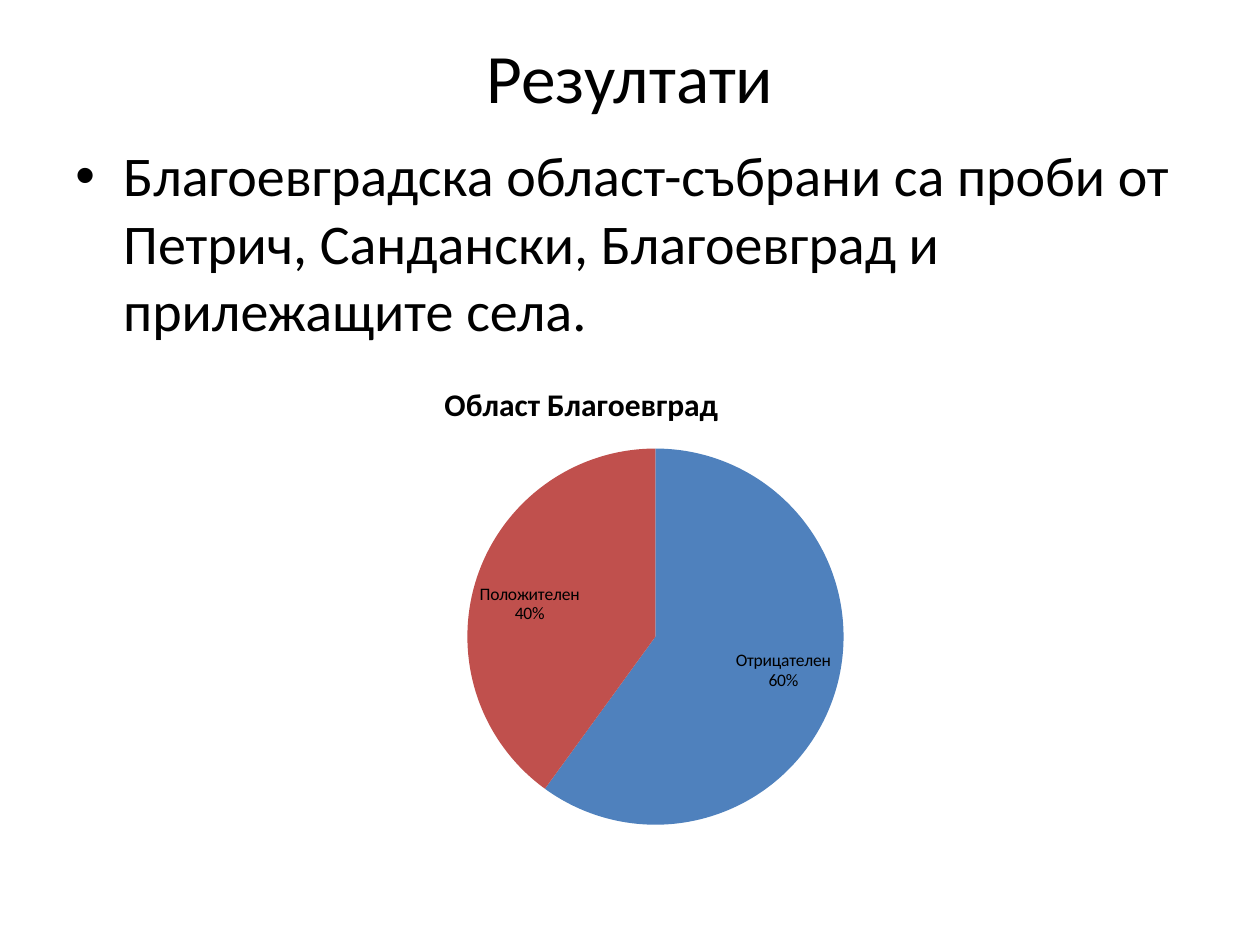
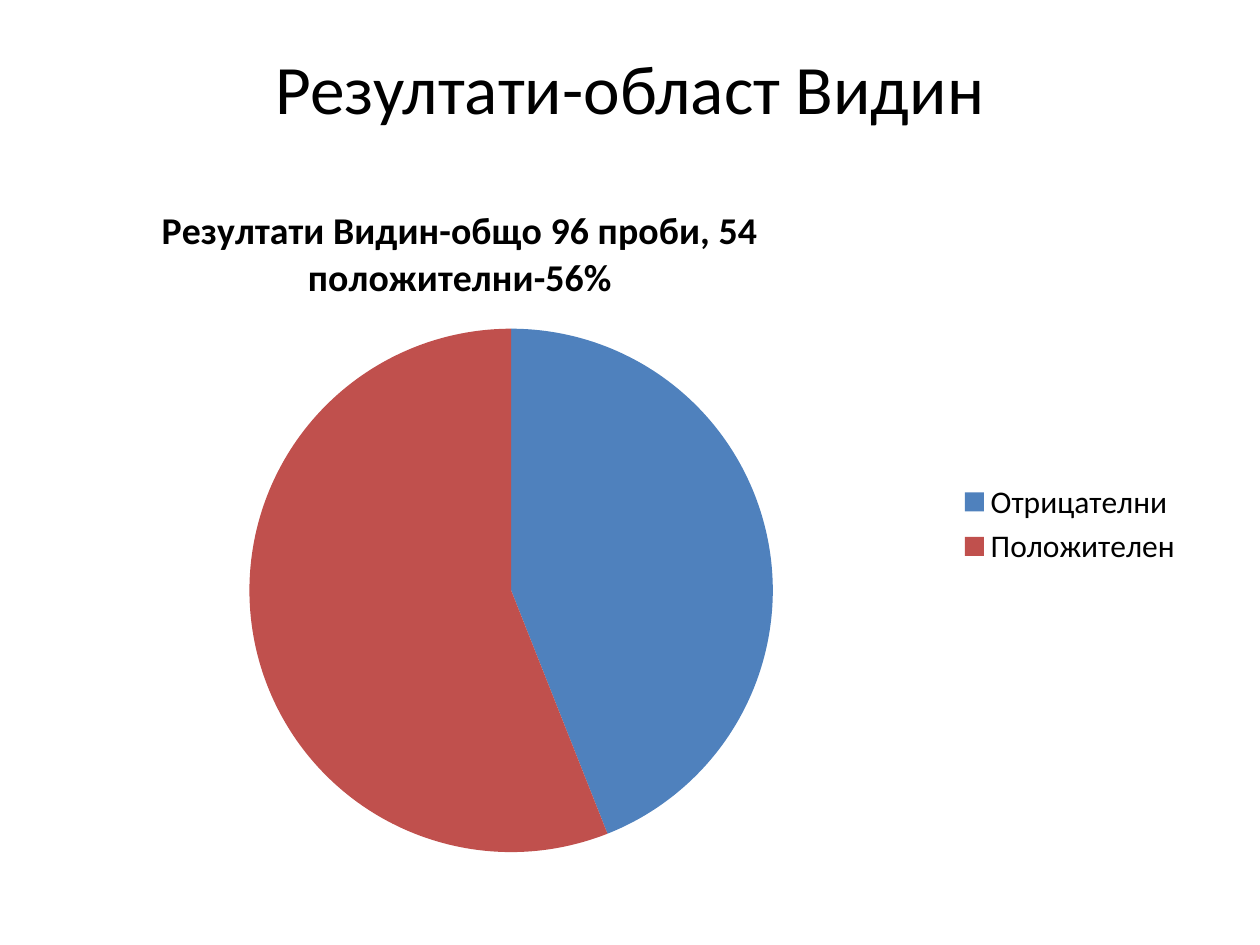
from lxml import etree
from pptx import Presentation
from pptx.chart.data import CategoryChartData
from pptx.dml.color import RGBColor
from pptx.enum.chart import XL_CHART_TYPE as ChartType, XL_LEGEND_POSITION as LegendPosition
from pptx.enum.text import MSO_ANCHOR as Anchor, MSO_AUTO_SIZE as AutoSize, PP_ALIGN as Align
from pptx.oxml.ns import qn
from pptx.util import Inches, Pt

FONT = "Calibri"
BLACK = RGBColor(0x00, 0x00, 0x00)
BLUE = RGBColor(0x4F, 0x81, 0xBD)
RED = RGBColor(0xC0, 0x50, 0x4D)
SLICE_COLORS = (BLUE, RED)
TITLE_ONLY = 5
LEFT, TOP, WIDTH = 0.5, 0.3, 9


def style_font(font, size, bold=False):
    font.name = FONT
    font.size = Pt(size)
    font.bold = bold
    font.color.rgb = BLACK


def add_span(para, text, size, bold=False):
    span = para.add_run()
    span.text = text
    style_font(span.font, size, bold)


def add_page(deck, title, title_height):
    page = deck.slides.add_slide(deck.slide_layouts[TITLE_ONLY])
    box = page.shapes.title
    box.left, box.top = Inches(LEFT), Inches(TOP)
    box.width, box.height = Inches(WIDTH), Inches(title_height)
    frame = box.text_frame
    frame.auto_size = AutoSize.NONE
    frame.vertical_anchor = Anchor.MIDDLE
    para = frame.paragraphs[0]
    para.alignment = Align.CENTER
    add_span(para, title, 39.6)
    return page


def add_bullet(page, text, top, height):
    box = page.shapes.add_textbox(Inches(LEFT), Inches(top), Inches(WIDTH), Inches(height))
    box.text_frame.word_wrap = True
    para = box.text_frame.paragraphs[0]
    para.space_before = Pt(6.4)
    add_span(para, text, 32)
    # Hanging indent and bullet sign
    props = para._p.get_or_add_pPr()
    props.set("marL", str(Inches(0.38)))
    props.set("indent", str(-Inches(0.38)))
    etree.SubElement(props, qn("a:buFont")).set("typeface", "Arial")
    etree.SubElement(props, qn("a:buChar")).set("char", "•")


def set_layout(element, position, inner=False):
    """Place a chart part by fractions of the chart: x, y and optionally w, h."""
    for old in element.findall(qn("c:layout")):
        element.remove(old)
    layout = etree.Element(qn("c:layout"))
    manual = etree.SubElement(layout, qn("c:manualLayout"))
    settings = [("layoutTarget", "inner")] if inner else []
    settings += [("xMode", "edge"), ("yMode", "edge")]
    settings += zip("xywh", position)
    for name, value in settings:
        etree.SubElement(manual, qn(f"c:{name}")).set("val", str(value))
    text = element.find(qn("c:tx"))
    if text is None:
        element.insert(0, layout)
    else:
        text.addnext(layout)


def add_pie(page, place, title, series_name, slices, size, title_size, title_at, plot_at):
    data = CategoryChartData()
    data.categories = list(slices)
    data.add_series(series_name, list(slices.values()))
    place = [Inches(length) for length in place]
    chart = page.shapes.add_chart(ChartType.PIE, *place, data).chart
    style_font(chart.font, size)
    chart.has_legend = False

    # Chart title
    chart.has_title = True
    add_span(chart.chart_title.text_frame.paragraphs[0], title, title_size, True)
    set_layout(chart.chart_title._element, title_at)

    # Slices
    plot = chart.plots[0]
    plot.vary_by_categories = True
    for index, color in enumerate(SLICE_COLORS):
        fill = plot.series[0].points[index].format.fill
        fill.solid()
        fill.fore_color.rgb = color
    set_layout(chart._chartSpace.chart.plotArea, plot_at, inner=True)
    return chart


def show_labels(chart, size):
    plot = chart.plots[0]
    plot.has_data_labels = True
    labels = plot.data_labels
    labels.show_value = False
    labels.show_category_name = True
    labels.show_percentage = True
    style_font(labels.font, size)


def show_legend(chart, size):
    chart.has_legend = True
    chart.legend.position = LegendPosition.RIGHT
    chart.legend.include_in_layout = False
    style_font(chart.legend.font, size)


def main():
    deck = Presentation()
    deck.slide_width, deck.slide_height = Inches(10), Inches(7.5)

    # Blagoevgrad region
    page = add_page(deck, "Резултати", 0.61)
    add_bullet(page, "Благоевградска област-събрани са проби от Петрич, Сандански, "
               "Благоевград и прилежащите села.", 1.07, 5.63)
    chart = add_pie(page, (1.14, 2.88, 7.32, 3.78), "Област Благоевград ", "Series 1",
                    {"Отрицателен": 60, "Положителен": 40}, 10, 18,
                    (0.32, 0.03), (0.35, 0.18, 0.41, 0.79))
    show_labels(chart, 10)

    # Vidin region
    page = add_page(deck, "Резултати-област Видин", 0.77)
    vidin = "Резултати Видин-общо 96 проби, 54 положителни-56%"
    chart = add_pie(page, (0.51, 1.39, 8.98, 5.54), vidin, vidin,
                    {"Отрицателни": 44, "Положителен": 56}, 18, 21.6,
                    (0.08, 0.03), (0.16, 0.22, 0.47, 0.75))
    show_legend(chart, 18)

    deck.save("out.pptx")


if __name__ == "__main__":
    main()
